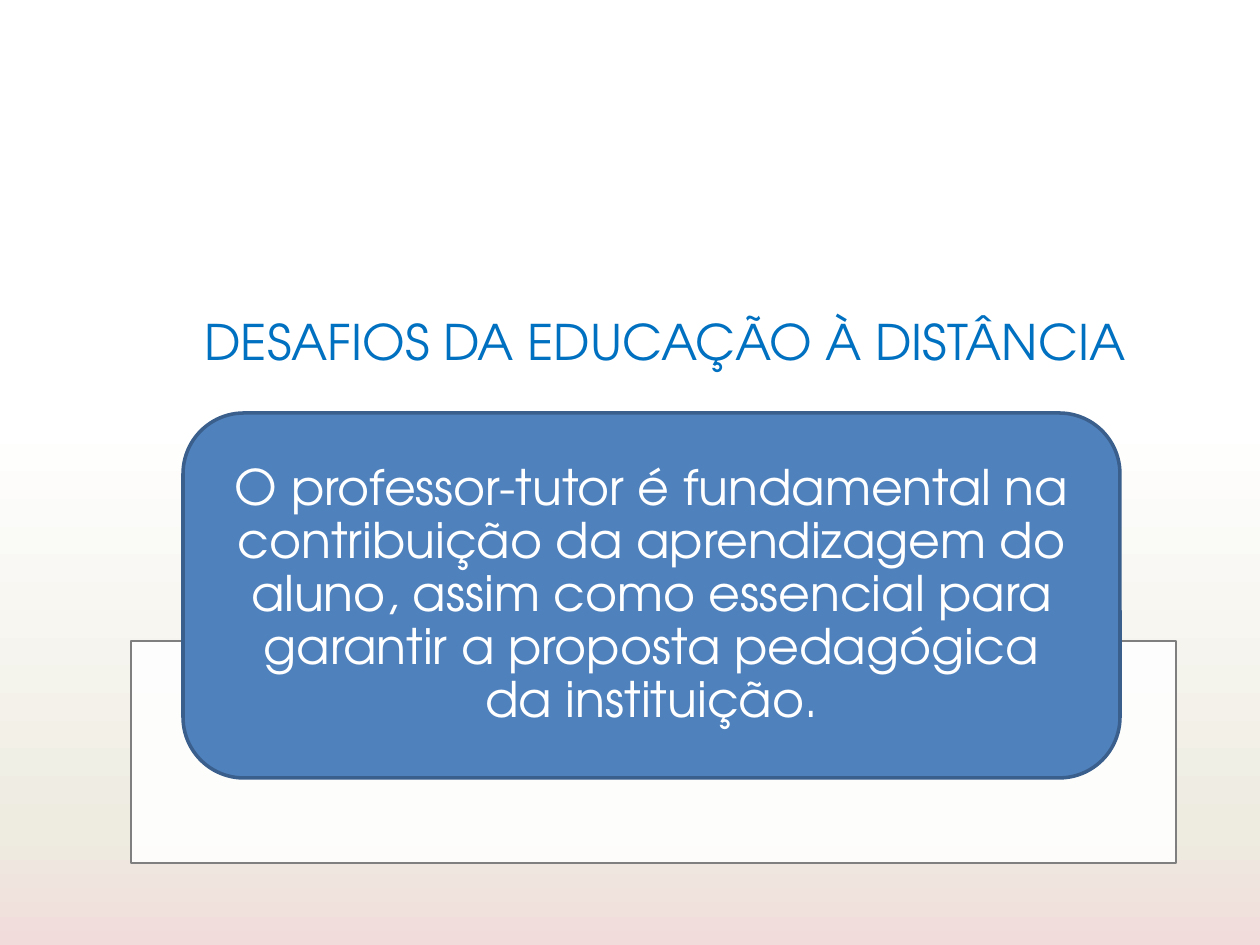
from dataclasses import dataclass

from lxml.etree import SubElement
from pptx import Presentation
from pptx.dml.color import RGBColor
from pptx.enum.shapes import MSO_SHAPE as Preset
from pptx.enum.text import MSO_ANCHOR as Anchor, MSO_AUTO_SIZE as AutoSize, PP_ALIGN as Align
from pptx.oxml.ns import qn
from pptx.util import Emu, Pt

EMU_PER_PX = 914400 / 126


def px(length: int) -> Emu:
    return Emu(round(length * EMU_PER_PX))


@dataclass(frozen=True)
class Theme:
    font: str = "TeX Gyre Adventor"
    text_size: int = 28
    title: str = "0070C0"
    text: str = "FFFFFF"
    card: str = "4F81BD"
    card_line: str = "3A5F8C"
    panel: str = "FFFFFF"
    panel_line: str = "7F7F7F"
    backdrop: tuple = ((44, "FFFFFF"), (88, "EEECE1"), (100, "F2DCDB"))


@dataclass(frozen=True)
class Area:
    left: int
    top: int
    width: int
    height: int

    def emu(self) -> tuple:
        return tuple(px(n) for n in (self.left, self.top, self.width, self.height))


@dataclass(frozen=True)
class Block:
    area: Area
    preset: Preset
    fill: str
    line: str
    line_width: float
    opacity: int = 100


THEME = Theme()
TITLE_AREA = Area(35, 305, 1260, 72)
PANEL = Block(Area(131, 641, 1045, 222), Preset.RECTANGLE,
              THEME.panel, THEME.panel_line, 0.75, opacity=90)
CARD = Block(Area(183, 413, 937, 365), Preset.ROUNDED_RECTANGLE,
             THEME.card, THEME.card_line, 2)
TITLE = "DESAFIOS DA EDUCAÇÃO À DISTÂNCIA"
MESSAGE = ("O professor-tutor é fundamental na contribuição da aprendizagem do aluno, "
           "assim como essencial para garantir a proposta pedagógica da instituição.")


def paint_backdrop(page) -> None:
    """Fill the page with a top-to-bottom gradient."""
    fill = page.background.fill
    fill.gradient()
    gradient = page.background._cSld.find(".//" + qn("a:gradFill"))
    stops = gradient.find(qn("a:gsLst"))
    for stop in list(stops):
        stops.remove(stop)
    for position, color in THEME.backdrop:
        stop = SubElement(stops, qn("a:gs"), pos=str(position * 1000))
        SubElement(stop, qn("a:srgbClr"), val=color)
    gradient.find(qn("a:lin")).set("ang", "5400000")


def draw_block(page, block: Block):
    shape = page.shapes.add_shape(block.preset, *block.area.emu())
    shape.shadow.inherit = False
    shape.fill.solid()
    shape.fill.fore_color.rgb = RGBColor.from_string(block.fill)
    shape.line.color.rgb = RGBColor.from_string(block.line)
    shape.line.width = Pt(block.line_width)
    if block.opacity < 100:
        color = shape._element.spPr.find(qn("a:solidFill")).find(qn("a:srgbClr"))
        SubElement(color, qn("a:alpha"), val=str(block.opacity * 1000))
    return shape


def write_text(frame, text: str, color: str, line_spacing: float = 1.0) -> None:
    frame.word_wrap = True
    para = frame.paragraphs[0]
    para.alignment = Align.CENTER
    para.line_spacing = line_spacing
    span = para.add_run()
    span.text = text
    span.font.name = THEME.font
    span.font.size = Pt(THEME.text_size)
    span.font.color.rgb = RGBColor.from_string(color)


def main() -> None:
    deck = Presentation()
    deck.slide_width, deck.slide_height = px(1260), px(945)
    page = deck.slides.add_slide(deck.slide_layouts[6])
    paint_backdrop(page)

    # Title
    title_box = page.shapes.add_textbox(*TITLE_AREA.emu())
    write_text(title_box.text_frame, TITLE, THEME.title)
    title_box.text_frame.auto_size = AutoSize.SHAPE_TO_FIT_TEXT

    # Panel behind the message card
    draw_block(page, PANEL)

    # Message card
    frame = draw_block(page, CARD).text_frame
    frame.vertical_anchor = Anchor.MIDDLE
    frame.margin_left = frame.margin_right = px(28)
    frame.margin_top = frame.margin_bottom = 0
    write_text(frame, MESSAGE, THEME.text, line_spacing=0.9)

    deck.save("out.pptx")


if __name__ == "__main__":
    main()
